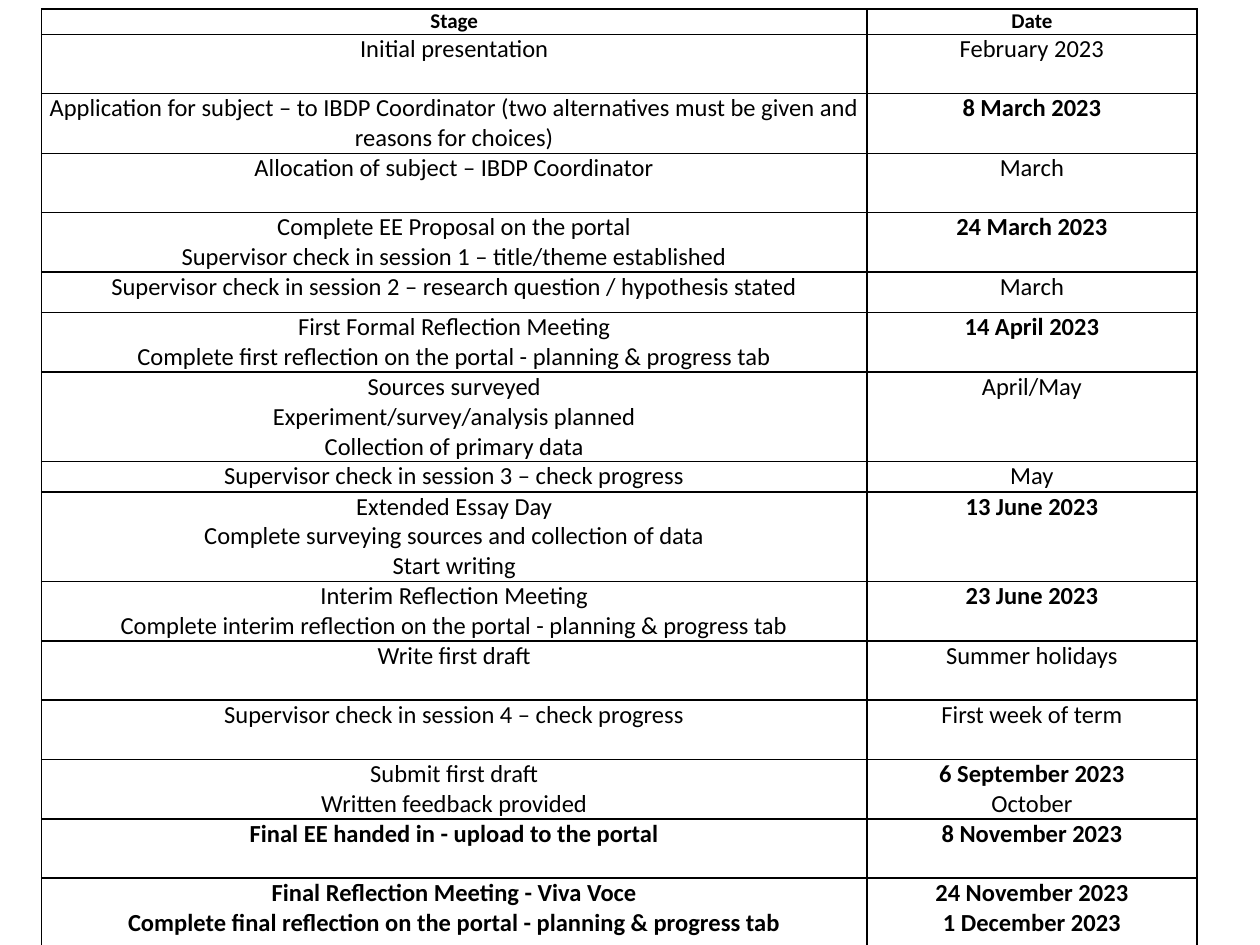
from lxml import etree
from pptx import Presentation
from pptx.dml.color import RGBColor
from pptx.enum.text import PP_ALIGN
from pptx.oxml.ns import qn
from pptx.util import Inches, Pt

COLORS = {"ink": "000000", "paper": "FFFFFF"}
FONT = "Calibri"
LEFT, TOP = 0.33, 0.07
COL_WIDTHS = [6.55, 2.62]
HEADER, ONE, SHORT, TWO, THREE, LAST = 0.2, 0.24, 0.32, 0.47, 0.71, 0.54

# Row height, stage lines, date lines; a leading * marks a bold line
ROWS = [
    (HEADER, ["*Stage"], ["*Date"]),
    (TWO, ["Initial presentation"], ["February 2023"]),
    (TWO, ["Application for subject – to IBDP Coordinator "
           "(two alternatives must be given and reasons for choices)"], ["*8 March 2023"]),
    (TWO, ["Allocation of subject – IBDP Coordinator"], ["March"]),
    (TWO, ["Complete EE Proposal on the portal",
           "Supervisor check in session 1 – title/theme established"], ["*24 March 2023"]),
    (SHORT, ["Supervisor check in session 2 – research question / hypothesis stated"],
     ["March"]),
    (TWO, ["First Formal Reflection Meeting",
           "Complete first reflection on the portal - planning & progress tab"],
     ["*14 April 2023"]),
    (THREE, ["Sources surveyed", "Experiment/survey/analysis planned",
             "Collection of primary data"], ["April/May"]),
    (ONE, ["Supervisor check in session 3 – check progress"], ["May"]),
    (THREE, ["Extended Essay Day", "Complete surveying sources and collection of data",
             "Start writing"], ["*13 June 2023"]),
    (TWO, ["Interim Reflection Meeting",
           "Complete interim reflection on the portal - planning & progress tab"],
     ["*23 June 2023"]),
    (TWO, ["Write first draft"], ["Summer holidays"]),
    (TWO, ["Supervisor check in session 4 – check progress"], ["First week of term"]),
    (TWO, ["Submit first draft", "Written feedback provided"],
     ["*6 September 2023", "October"]),
    (TWO, ["*Final EE handed in - upload to the portal"], ["*8 November 2023"]),
    (LAST, ["*Final Reflection Meeting - Viva Voce",
            "*Complete final reflection on the portal - planning & progress tab"],
     ["*24 November 2023", "*1 December 2023"]),
]


def add_borders(cell):
    tc_pr = cell._tc.get_or_add_tcPr()
    for i, side in enumerate(("lnL", "lnR", "lnT", "lnB")):
        ln = etree.Element(qn(f"a:{side}"), w=str(Pt(1)))
        fill = etree.SubElement(ln, qn("a:solidFill"))
        etree.SubElement(fill, qn("a:srgbClr"), val=COLORS["ink"])
        tc_pr.insert(i, ln)  # borders come before the fill


def fill_cell(cell, lines, size):
    cell.margin_left = cell.margin_right = cell.margin_top = cell.margin_bottom = 0
    cell.fill.solid()
    cell.fill.fore_color.rgb = RGBColor.from_string(COLORS["paper"])
    add_borders(cell)
    tf = cell.text_frame
    tf.text = "\n".join(line.lstrip("*") for line in lines)
    for p, line in zip(tf.paragraphs, lines):
        p.alignment = PP_ALIGN.CENTER
        font = p.runs[0].font
        font.name, font.size, font.bold = FONT, Pt(size), line.startswith("*")
        font.color.rgb = RGBColor.from_string(COLORS["ink"])


prs = Presentation()
prs.slide_width, prs.slide_height = Inches(10), Inches(7.5)
s = prs.slides.add_slide(prs.slide_layouts[6])
heights = [row[0] for row in ROWS]
table = s.shapes.add_table(
    len(ROWS), len(COL_WIDTHS), Inches(LEFT), Inches(TOP),
    Inches(sum(COL_WIDTHS)), Inches(sum(heights))).table
table.first_row = table.horz_banding = False
for col, width in zip(table.columns, COL_WIDTHS):
    col.width = Inches(width)
for i, (height, *cells) in enumerate(ROWS):
    table.rows[i].height = Inches(height)
    for j, lines in enumerate(cells):
        fill_cell(table.cell(i, j), lines, 12 if i == 0 else 14)

prs.save("out.pptx")
